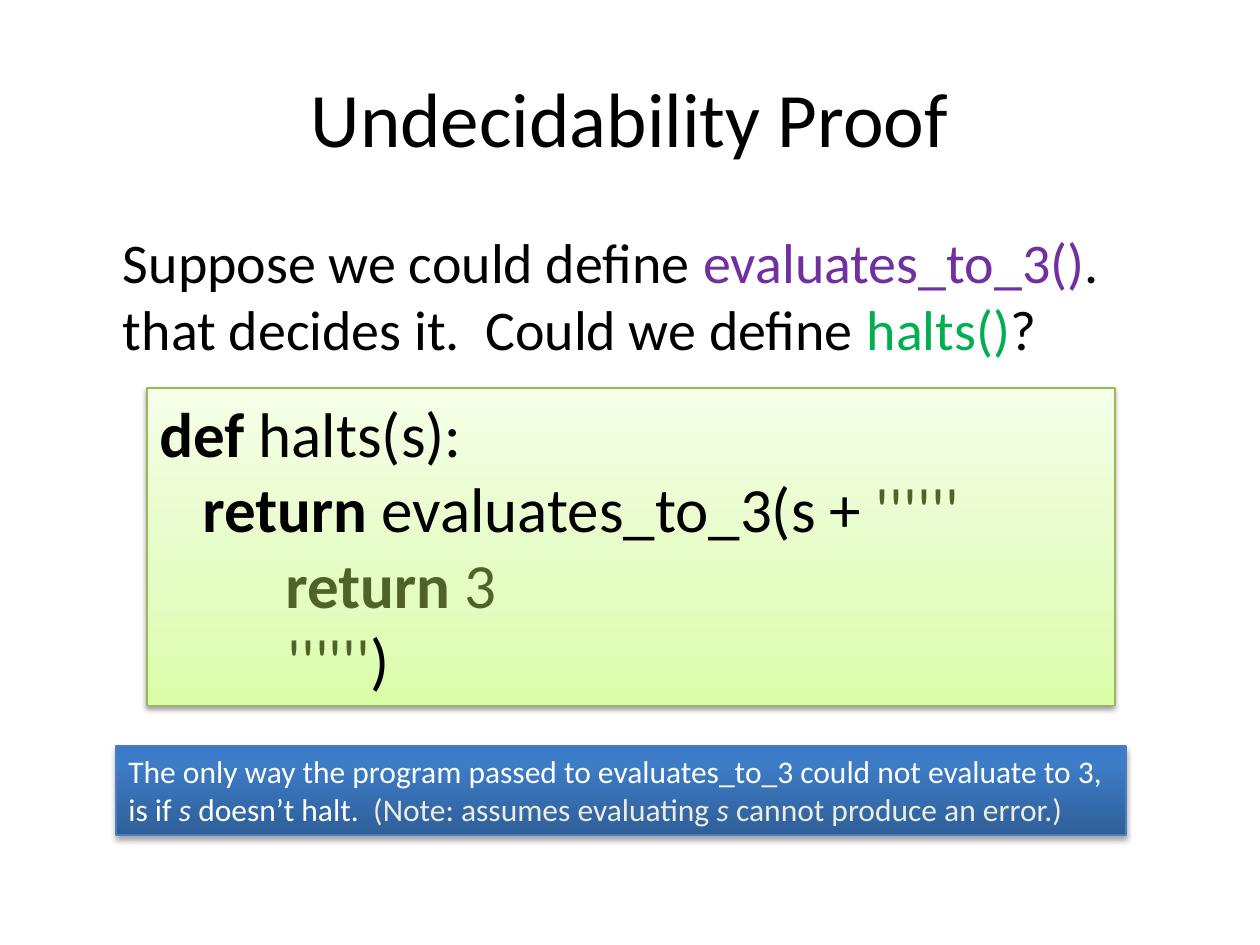
from lxml import etree
from pptx import Presentation
from pptx.dml.color import RGBColor
from pptx.enum.shapes import MSO_SHAPE
from pptx.enum.text import MSO_ANCHOR, MSO_AUTO_SIZE, PP_ALIGN
from pptx.oxml.ns import qn
from pptx.util import Emu, Pt

PX = 914400 // 126
FONT = "Calibri"
RECT = MSO_SHAPE.RECTANGLE
TOP, MIDDLE = MSO_ANCHOR.TOP, MSO_ANCHOR.MIDDLE
LEFT, CENTER = PP_ALIGN.LEFT, PP_ALIGN.CENTER
COLORS = {
    "black": "000000", "white": "FFFFFF", "cream": "EEECE1",
    "purple": "7030A0", "green": "00B050", "olive": "4F6228",
    "code_line": "98B955", "note_line": "4B7EBC",
    "code_low": "DAFDA7", "code_mid": "E4FCC2", "code_high": "F5FFE7",
    "note_low": "2F5F99", "note_mid": "3D7CC7", "note_high": "3A7CCB",
}


def px(*lengths):
    """Turn pixel lengths into EMU."""
    return [Emu(n * PX) for n in lengths]


def color(name):
    """Look up a colour by name."""
    return RGBColor.from_string(COLORS[name])


def add_run(p, text, size, tint="black", bold=False, italic=False):
    """Add one formatted run to a paragraph."""
    r = p.add_run()
    r.text = text
    r.font.name, r.font.size = FONT, Pt(size)
    r.font.bold, r.font.italic = bold, italic
    r.font.color.rgb = color(tint)


def add_color(parent, name, alpha=100):
    """Append an RGB colour element with its opacity in percent."""
    clr = etree.SubElement(parent, qn("a:srgbClr"), val=COLORS[name])
    if alpha < 100:
        etree.SubElement(clr, qn("a:alpha"), val=str(alpha * 1000))


def add_panel(s, box, stops, line, alpha, dist):
    """Add a rectangle with an upward gradient and a soft shadow below."""
    sp = s.shapes.add_shape(RECT, *px(*box))
    sp.line.color.rgb = color(line)
    sp.line.width = Pt(0.75)
    sp.shadow.inherit = False
    sp.fill.gradient()
    sp.fill.gradient_angle = 90
    stop_list = sp.element.spPr.find(".//" + qn("a:gsLst"))
    for old in list(stop_list):
        stop_list.remove(old)
    for pos, name in stops:
        add_color(etree.SubElement(stop_list, qn("a:gs"), pos=str(pos * 1000)), name)
    effects = sp.element.spPr.find(qn("a:effectLst"))
    shadow = etree.SubElement(
        effects, qn("a:outerShdw"), blurRad=str(Pt(3.1)), dist=str(Pt(dist)),
        dir="5400000", rotWithShape="0")
    add_color(shadow, "black", alpha)
    tf = sp.text_frame
    tf.word_wrap, tf.vertical_anchor = True, TOP
    tf.auto_size = MSO_AUTO_SIZE.SHAPE_TO_FIT_TEXT
    return tf


def add_title(s, box):
    """Place the slide title."""
    sp = s.shapes.title
    sp.left, sp.top, sp.width, sp.height = px(*box)
    sp.text_frame.vertical_anchor = MIDDLE
    p = sp.text_frame.paragraphs[0]
    p.alignment = CENTER
    add_run(p, "Undecidability Proof", 44)


def add_question(s, box):
    """Place the question under the title."""
    tf = s.shapes.add_textbox(*px(*box)).text_frame
    tf.word_wrap = True
    tf.margin_left = px(60)[0]
    p = tf.paragraphs[0]
    for text, tint in (
            ("Suppose we could define ", "black"),
            ("evaluates_to_3()", "purple"),
            (". that decides it.  Could we define ", "black"),
            ("halts()", "green"),
            ("?", "black")):
        add_run(p, text, 32, tint)


def add_code(s, box):
    """Place the code panel, one indented paragraph per code line."""
    stops = ((0, "code_low"), (35, "code_mid"), (100, "code_high"))
    tf = add_panel(s, box, stops, "code_line", 38, 1.6)
    lines = (
        (0, (("def", "black", True), (" halts(s):", "black", False))),
        (43, (("return", "black", True),
              (" evaluates_to_3(s + ", "black", False),
              ("''''''", "olive", False))),
        (126, (("return", "olive", True), (" 3", "olive", False))),
        (128, (("''''''", "olive", False), (")", "black", False))),
    )
    for i, (indent, runs) in enumerate(lines):
        p = tf.add_paragraph() if i else tf.paragraphs[0]
        p.alignment = LEFT
        p._p.get_or_add_pPr().set("marL", str(indent * PX))
        for text, tint, bold in runs:
            add_run(p, text, 36, tint, bold)


def add_note(s, box):
    """Place the explanation panel."""
    stops = ((0, "note_low"), (80, "note_mid"), (100, "note_high"))
    tf = add_panel(s, box, stops, "note_line", 35, 1.8)
    p = tf.paragraphs[0]
    p.alignment = LEFT
    for text, tint, italic in (
            ("The only way the program passed to evaluates_to_3 could not "
             "evaluate to 3, is if ", "white", False),
            ("s ", "white", True),
            ("doesn’t halt.  ", "white", False),
            ("(Note: assumes evaluating ", "cream", False),
            ("s ", "cream", True),
            ("cannot produce an error.)", "cream", False)):
        add_run(p, text, 18, tint, italic=italic)


def main():
    """Build and save the slide."""
    prs = Presentation()
    prs.slide_width, prs.slide_height = px(1260, 945)
    s = prs.slides.add_slide(prs.slide_layouts[5])
    add_title(s, (63, 38, 1134, 157))
    add_question(s, (63, 221, 1134, 157))
    add_code(s, (147, 388, 968, 318))
    add_note(s, (116, 746, 1010, 89))
    prs.save("out.pptx")


if __name__ == "__main__":
    main()
